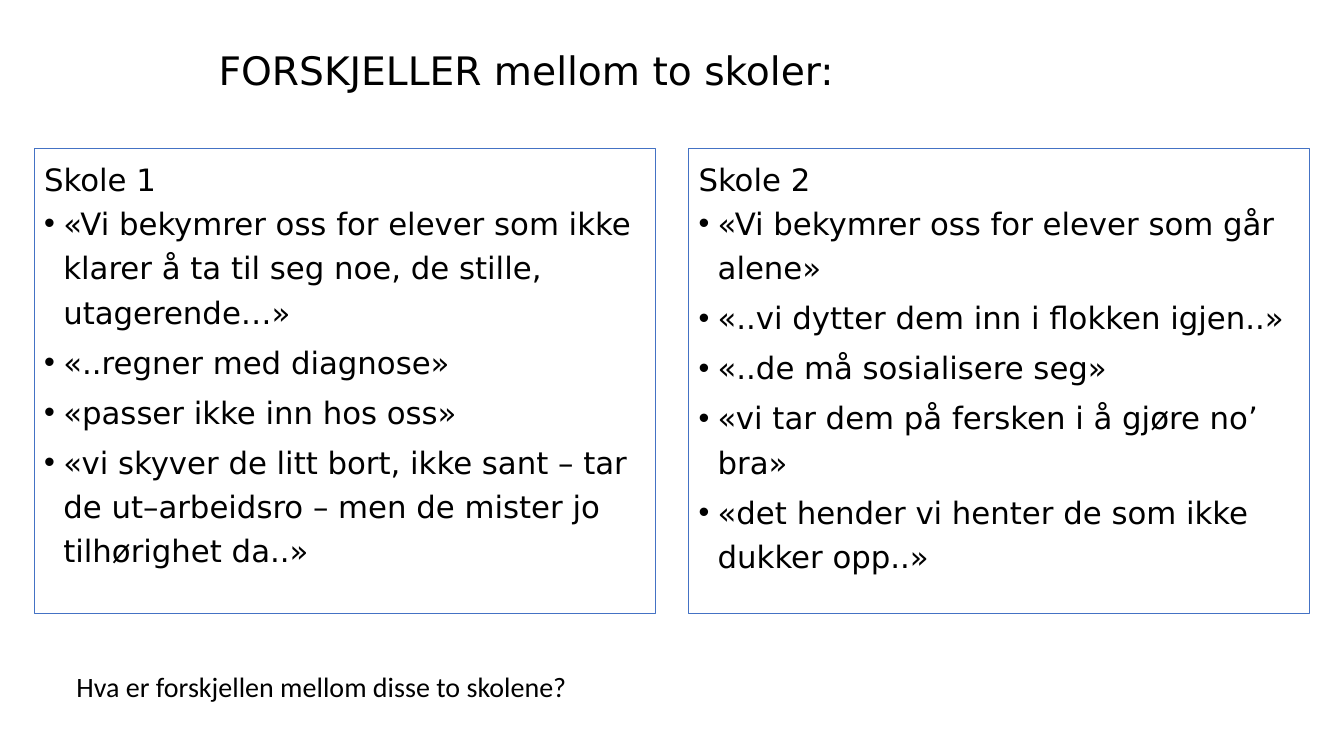
from pptx import Presentation
from pptx.dml.color import RGBColor as RGB
from pptx.enum.shapes import MSO_SHAPE as Shape
from pptx.enum.text import MSO_ANCHOR as Anchor, PP_ALIGN as Align
from pptx.oxml.ns import qn
from pptx.util import Inches, Pt
from lxml.etree import SubElement

COLORS = {"text": "000000", "border": "4472C4"}
MAIN_FONT = "DejaVu Sans"
LEFT, COLUMN_WIDTH, COLUMN_STEP = 0.34, 6.16, 6.49
TOP, COLUMN_HEIGHT = 1.47, 4.62
INDENT = 0.19

SCHOOLS = {
    "Skole 1": [
        "«Vi bekymrer oss for elever som ikke klarer å ta til seg noe, de stille, utagerende…»",
        "«..regner med diagnose»",
        "«passer ikke inn hos oss»",
        "«vi skyver de litt bort, ikke sant – tar de ut–arbeidsro – men de mister jo tilhørighet da..»",
    ],
    "Skole 2": [
        "«Vi bekymrer oss for elever som går alene»",
        "«..vi dytter dem inn i flokken igjen..»",
        "«..de må sosialisere seg»",
        "«vi tar dem på fersken i å gjøre no’ bra»",
        "«det hender vi henter de som ikke dukker opp..»",
    ],
}


def write(paragraph, text, size, font=MAIN_FONT):
    paragraph.text = text
    paragraph.alignment = Align.LEFT
    paragraph.font.size = Pt(size)
    paragraph.font.name = font
    paragraph.font.color.rgb = RGB.from_string(COLORS["text"])


def add_bullet(paragraph):
    props = paragraph._p.get_or_add_pPr()
    props.set("marL", str(Inches(INDENT)))
    props.set("indent", str(-Inches(INDENT)))
    bullet_color = SubElement(props, qn("a:buClr"))
    SubElement(bullet_color, qn("a:srgbClr"), val=COLORS["text"])
    SubElement(props, qn("a:buFont"), typeface="Arial")
    SubElement(props, qn("a:buChar"), char="•")


def add_line(slide, box, text, size, font, anchor):
    frame = slide.shapes.add_textbox(*map(Inches, box)).text_frame
    frame.word_wrap = True
    frame.vertical_anchor = anchor
    write(frame.paragraphs[0], text, size, font)


def add_school(slide, column, school, quotes):
    box = (LEFT + column * COLUMN_STEP, TOP, COLUMN_WIDTH, COLUMN_HEIGHT)
    panel = slide.shapes.add_shape(Shape.RECTANGLE, *map(Inches, box))
    panel.shadow.inherit = False
    panel.fill.background()
    panel.line.color.rgb = RGB.from_string(COLORS["border"])
    panel.line.width = Pt(0.75)
    frame = panel.text_frame
    frame.word_wrap = True
    frame.vertical_anchor = Anchor.TOP
    for row, text in enumerate([school, *quotes]):
        paragraph = frame.paragraphs[0] if row == 0 else frame.add_paragraph()
        write(paragraph, text, 22)
        paragraph.line_spacing = 1.2
        paragraph.space_before = Pt(4 if row > 1 else 0)
        if row:
            add_bullet(paragraph)


def main():
    deck = Presentation()
    deck.slide_width, deck.slide_height = Inches(13.33), Inches(7.5)
    slide = deck.slides.add_slide(deck.slide_layouts[6])
    add_line(slide, (2.07, 0.11, 10.24, 0.87),
             "FORSKJELLER mellom to skoler:", 28, MAIN_FONT, Anchor.BOTTOM)
    for column, (school, quotes) in enumerate(SCHOOLS.items()):
        add_school(slide, column, school, quotes)
    add_line(slide, (0.66, 6.59, 5.2, 0.44),
             "Hva er forskjellen mellom disse to skolene?", 20, "Calibri", Anchor.TOP)
    deck.save("out.pptx")


if __name__ == "__main__":
    main()
